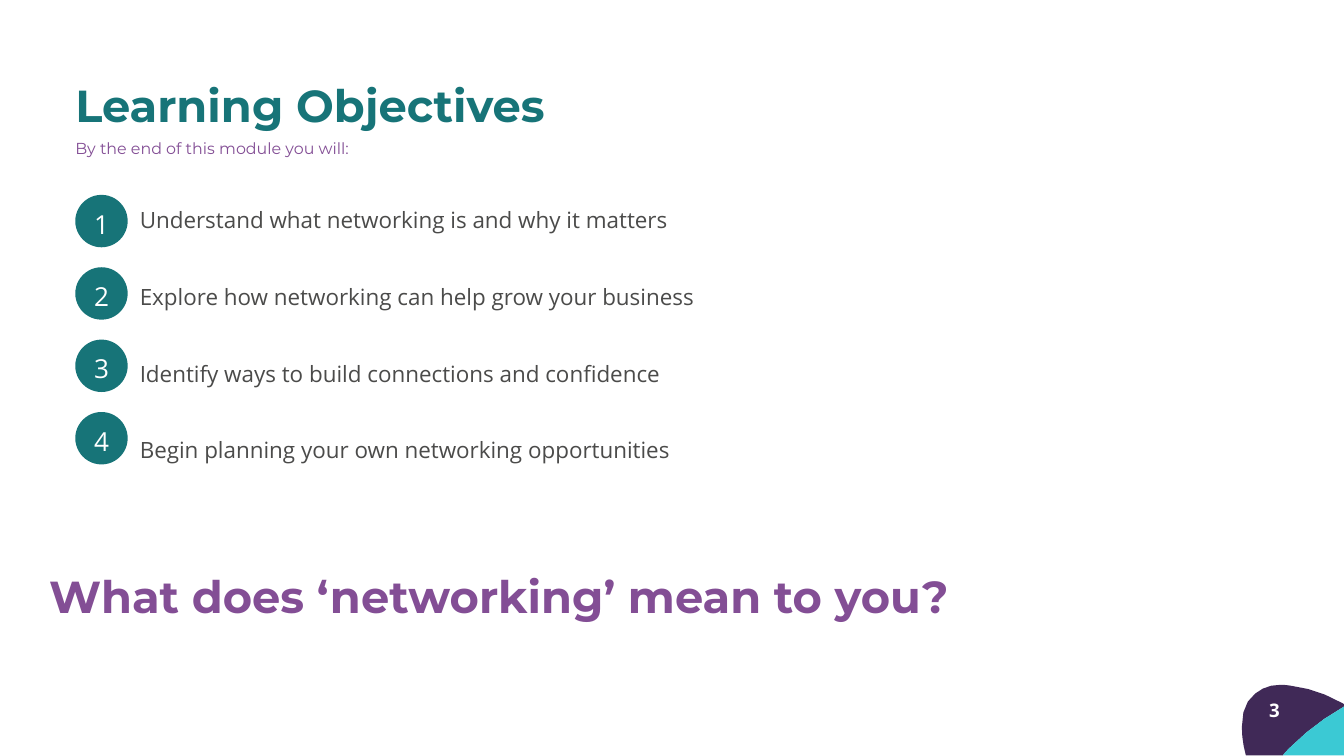
from dataclasses import dataclass

from pptx import Presentation
from pptx.dml.color import RGBColor
from pptx.enum.shapes import MSO_SHAPE
from pptx.enum.text import MSO_ANCHOR, PP_ALIGN
from pptx.util import Inches, Pt


@dataclass(frozen=True)
class Theme:
    """Colours, fonts and type sizes of the slide."""
    teal: str = "177478"
    purple: str = "834E95"
    plum: str = "402957"
    aqua: str = "3BC9D4"
    grey: str = "4B4B4A"
    white: str = "FFFFFF"
    heading_font: str = "Montserrat"
    body_font: str = "Open Sans"
    heading_size: int = 48
    subtitle_size: int = 17
    badge_size: int = 28
    body_size: int = 24
    page_size: int = 20


THEME = Theme()
OBJECTIVES = [
    "Understand what networking is and why it matters",
    "Explore how networking can help grow your business",
    "Identify ways to build connections and confidence",
    "Begin planning your own networking opportunities",
]
BADGE_TOP, BADGE_PITCH, BADGE_SIZE = 2.9, 1.077, 0.78
LEFT_MARGIN = 1.12
UNITS_PER_INCH = 1000
CORNER_EDGE = [
    [(19.09, 11.24), (19.12, 11.2), (19.16, 11.16), (19.2, 11.12)],
    [(19.2, 11.12), (19.43, 10.89), (19.69, 10.69), (19.99, 10.52)],
]
PETAL_OUTLINE = [
    [(20.03, 10.49), (20.01, 10.49), (20, 10.48), (19.99, 10.47)],
    [(19.99, 10.47), (19.69, 10.3), (19.46, 10.24), (19.24, 10.21)],
    [(19.24, 10.21), (19.18, 10.2), (19.12, 10.19), (19.06, 10.19)],
    [(19.06, 10.19), (18.91, 10.19), (18.79, 10.23), (18.68, 10.32)],
    [(18.68, 10.32), (18.55, 10.42), (18.48, 10.57), (18.48, 10.82)],
    [(18.48, 10.82), (18.48, 10.96), (18.5, 11.1), (18.54, 11.24)],
]


def curve_points(curves, steps=3):
    """Return points along a chain of cubic Bézier curves."""
    points = [curves[0][0]]
    for curve in curves:
        for step in range(1, steps + 1):
            t = step / steps
            weights = ((1 - t) ** 3, 3 * t * (1 - t) ** 2, 3 * t * t * (1 - t), t ** 3)
            points.append(tuple(sum(w * p[axis] for w, p in zip(weights, curve))
                                for axis in (0, 1)))
    return points


def paint(shape, colour):
    """Give a shape a plain fill without line or shadow."""
    shape.fill.solid()
    shape.fill.fore_color.rgb = RGBColor.from_string(colour)
    shape.line.fill.background()
    shape.shadow.inherit = False


def add_outline(slide, points, colour):
    """Draw a closed filled outline through points in inches."""
    first, *rest = [(round(x * UNITS_PER_INCH), round(y * UNITS_PER_INCH)) for x, y in points]
    builder = slide.shapes.build_freeform(*first, scale=Inches(1) / UNITS_PER_INCH)
    builder.add_line_segments(rest, close=True)
    paint(builder.convert_to_shape(), colour)


def format_text(shape, size, colour, font, spacing, bold=False,
                align=PP_ALIGN.LEFT, after=0, wrap=True):
    """Format every paragraph of a shape alike, from the top and without insets."""
    frame = shape.text_frame
    frame.word_wrap = wrap
    frame.vertical_anchor = MSO_ANCHOR.TOP
    frame.margin_left = frame.margin_top = frame.margin_right = frame.margin_bottom = 0
    for paragraph in frame.paragraphs:
        paragraph.alignment = align
        paragraph.line_spacing = Pt(spacing)
        paragraph.space_before = Pt(0)
        paragraph.space_after = Pt(after)
        for run in paragraph.runs:
            run.font.size = Pt(size)
            run.font.name = font
            run.font.bold = bold
            run.font.color.rgb = RGBColor.from_string(colour)


def add_text(slide, text, left, top, width, height, **style):
    """Add a formatted text box."""
    box = slide.shapes.add_textbox(Inches(left), Inches(top), Inches(width), Inches(height))
    box.text_frame.text = text
    format_text(box, **style)


def set_title(slide, text, left, top, width, height, **style):
    """Place and format the title placeholder."""
    title = slide.shapes.title
    title.left, title.top = Inches(left), Inches(top)
    title.width, title.height = Inches(width), Inches(height)
    title.text_frame.text = text
    format_text(title, **style)


def add_badge(slide, number):
    """Add a numbered circle at its place in the column."""
    top = BADGE_TOP + (number - 1) * BADGE_PITCH
    badge = slide.shapes.add_shape(MSO_SHAPE.OVAL, Inches(LEFT_MARGIN), Inches(top),
                                   Inches(BADGE_SIZE), Inches(BADGE_SIZE))
    paint(badge, THEME.teal)
    badge.text_frame.text = str(number)
    format_text(badge, THEME.badge_size, THEME.white, THEME.body_font, 36,
                align=PP_ALIGN.CENTER, wrap=False)
    badge.text_frame.margin_top = Inches(0.05)


def add_corner(slide):
    """Draw the corner petal and its page number."""
    edge = curve_points(CORNER_EDGE)
    add_outline(slide, curve_points(PETAL_OUTLINE) + edge, THEME.plum)
    add_outline(slide, edge + [(20.03, 10.49), (20.03, 11.24)], THEME.aqua)
    add_text(slide, "3", 18.88, 10.34, 0.17, 0.22, size=THEME.page_size,
             colour=THEME.white, font=THEME.body_font, spacing=28, bold=True,
             align=PP_ALIGN.CENTER, wrap=False)


def main():
    """Build and save the slide."""
    presentation = Presentation()
    presentation.slide_width, presentation.slide_height = Inches(20), Inches(11.25)
    slide = presentation.slides.add_slide(presentation.slide_layouts[5])
    heading = dict(size=THEME.heading_size, font=THEME.heading_font, spacing=67.2, bold=True)

    add_corner(slide)
    set_title(slide, "Learning Objectives", LEFT_MARGIN, 1.03, 15.15, 0.89,
              colour=THEME.teal, **heading)
    add_text(slide, "By the end of this module you will:", LEFT_MARGIN, 2.02, 15.15, 0.31,
             size=THEME.subtitle_size, colour=THEME.purple, font=THEME.heading_font,
             spacing=23.8)
    for number in range(1, len(OBJECTIVES) + 1):
        add_badge(slide, number)
    add_text(slide, "\n".join(OBJECTIVES), 2.08, 3.01, 9.82, 3.9,
             size=THEME.body_size, colour=THEME.grey, font=THEME.body_font,
             spacing=33, after=49.2)
    add_text(slide, "What does ‘networking’ mean to you?", 0.73, 8.33, 17.75, 0.89,
             colour=THEME.purple, **heading)
    presentation.save("out.pptx")


if __name__ == "__main__":
    main()
